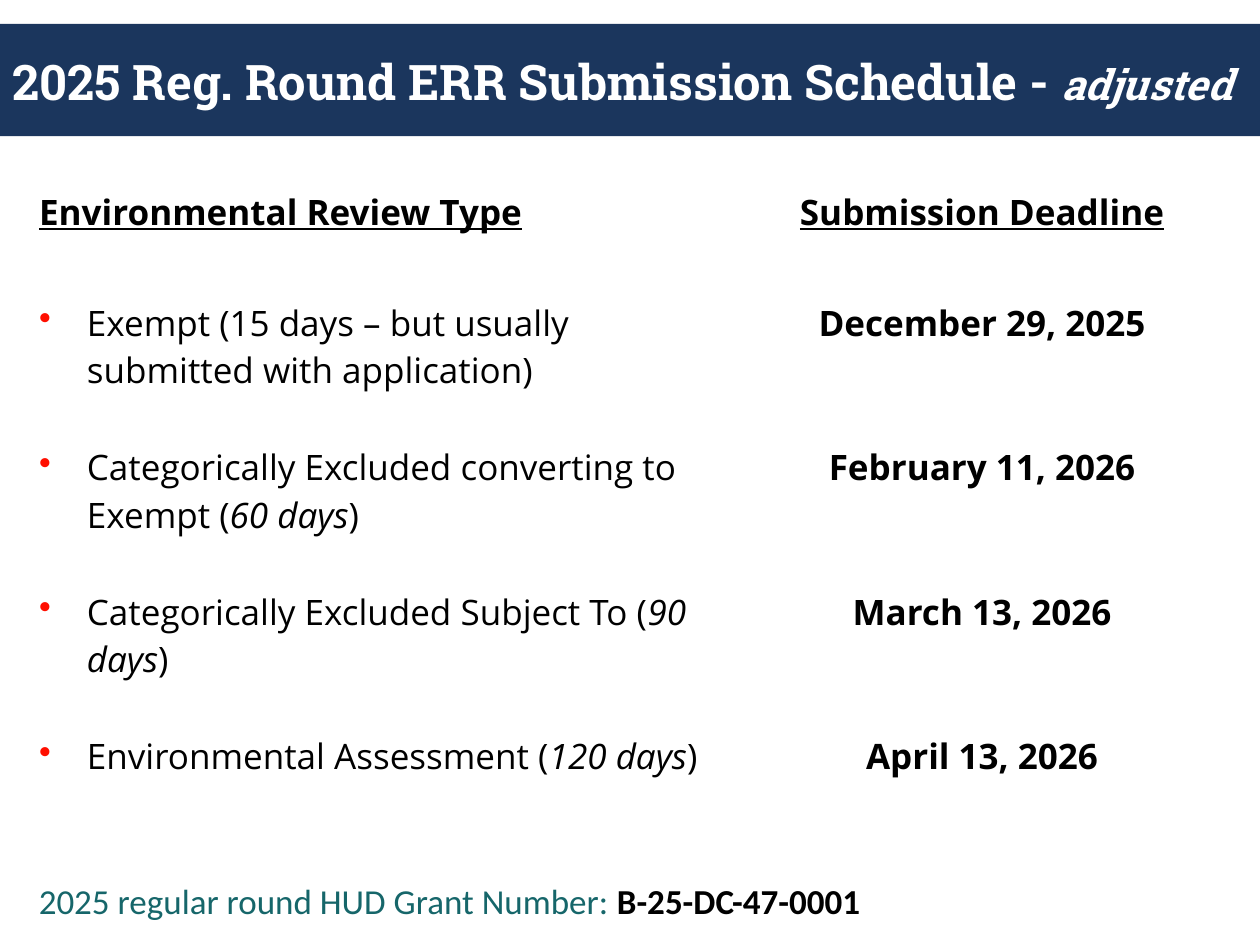
from dataclasses import dataclass

from lxml.etree import SubElement
from pptx import Presentation
from pptx.dml.color import RGBColor
from pptx.enum.shapes import MSO_SHAPE
from pptx.enum.text import MSO_ANCHOR, PP_ALIGN
from pptx.oxml.ns import qn
from pptx.util import Inches, Pt


@dataclass(frozen=True)
class Theme:
    navy: str = "1B365D"
    white: str = "FFFFFF"
    black: str = "000000"
    red: str = "FF0F00"
    teal: str = "16666A"
    title_font: str = "Roboto Slab"
    table_font: str = "Open Sans"
    note_font: str = "Calibri"
    title_size: int = 28
    accent_size: int = 24
    body_size: int = 20


theme = Theme()


def add_run(paragraph, text, color, **formats):
    run = paragraph.add_run()
    run.text = text
    run.font.color.rgb = RGBColor.from_string(color)
    for name, value in formats.items():
        setattr(run.font, name, value)


def add_bullet(paragraph):
    """Give the paragraph a red bullet with a hanging indent and a tab stop."""
    properties = paragraph._p.get_or_add_pPr()
    properties.set("marL", str(Inches(0.38)))
    properties.set("indent", str(Inches(-0.38)))
    bullet_color = SubElement(properties, qn("a:buClr"))
    SubElement(bullet_color, qn("a:srgbClr"), val=theme.red)
    SubElement(properties, qn("a:buChar"), char="•")
    tabs = SubElement(properties, qn("a:tabLst"))
    SubElement(tabs, qn("a:tab"), pos=str(Inches(4.5)), algn="l")


presentation = Presentation()
presentation.slide_width = Inches(10)
presentation.slide_height = Inches(7.5)
slide = presentation.slides.add_slide(presentation.slide_layouts[6])

# Title band
band = slide.shapes.add_shape(
    MSO_SHAPE.RECTANGLE, Inches(0), Inches(0.19), Inches(10), Inches(0.89))
band.shadow.inherit = False
band.fill.solid()
band.fill.fore_color.rgb = RGBColor.from_string(theme.navy)
band.line.fill.background()

title = slide.shapes.add_textbox(Inches(0), Inches(0.19), Inches(9.92), Inches(0.9))
title_frame = title.text_frame
title_frame.word_wrap = True
title_frame.vertical_anchor = MSO_ANCHOR.MIDDLE
title_frame.margin_right = Inches(0)
title_format = {"name": theme.title_font, "bold": True}
paragraph = title_frame.paragraphs[0]
add_run(paragraph, "2025 Reg. Round ERR Submission Schedule - ", theme.white,
        size=Pt(theme.title_size), **title_format)
add_run(paragraph, "adjusted", theme.white,
        size=Pt(theme.accent_size), italic=True, **title_format)

# Schedule: text before the day count, day count, text after it, deadline
schedule = [
    ("Environmental Review Type", "", "", "Submission Deadline"),
    ("Exempt (15 days – but usually submitted with application)", "", "",
     "December 29, 2025"),
    ("Categorically Excluded converting to Exempt (", "60 days", ")",
     "February 11, 2026"),
    ("Categorically Excluded Subject To (", "90 days", ")", "March 13, 2026"),
    ("Environmental Assessment (", "120 days", ")", "April 13, 2026"),
]
table = slide.shapes.add_table(
    len(schedule), 2, Inches(0.21), Inches(1.44), Inches(9.45), Inches(4.91)).table
table.first_row = False
table.horz_banding = False
for column, width in zip(table.columns, (5.72, 3.73)):
    column.width = Inches(width)
for row, height in zip(table.rows, (0.88, 1.1, 1.1, 1.1, 0.73)):
    row.height = Inches(height)

body_format = {"name": theme.table_font, "size": Pt(theme.body_size)}
for index, (before, days, after, deadline) in enumerate(schedule):
    is_header = index == 0
    type_cell, deadline_cell = table.rows[index].cells
    for cell in (type_cell, deadline_cell):
        cell.fill.background()
        cell.margin_bottom = Inches(0.43)

    paragraph = type_cell.text_frame.paragraphs[0]
    if not is_header:
        add_bullet(paragraph)
    for text, italic in ((before, False), (days, True), (after, False)):
        if text:
            add_run(paragraph, text, theme.black, bold=is_header,
                    underline=is_header, italic=italic, **body_format)

    paragraph = deadline_cell.text_frame.paragraphs[0]
    paragraph.alignment = PP_ALIGN.CENTER
    add_run(paragraph, deadline, theme.black, bold=True,
            underline=is_header, **body_format)

# Grant number
grant = slide.shapes.add_textbox(Inches(0.21), Inches(6.93), Inches(8.33), Inches(0.44))
grant.text_frame.word_wrap = True
note_format = {"name": theme.note_font, "size": Pt(theme.body_size)}
paragraph = grant.text_frame.paragraphs[0]
add_run(paragraph, "2025 regular round HUD Grant Number: ", theme.teal, **note_format)
add_run(paragraph, "B-25-DC-47-0001", theme.black, bold=True, **note_format)

presentation.save("out.pptx")
